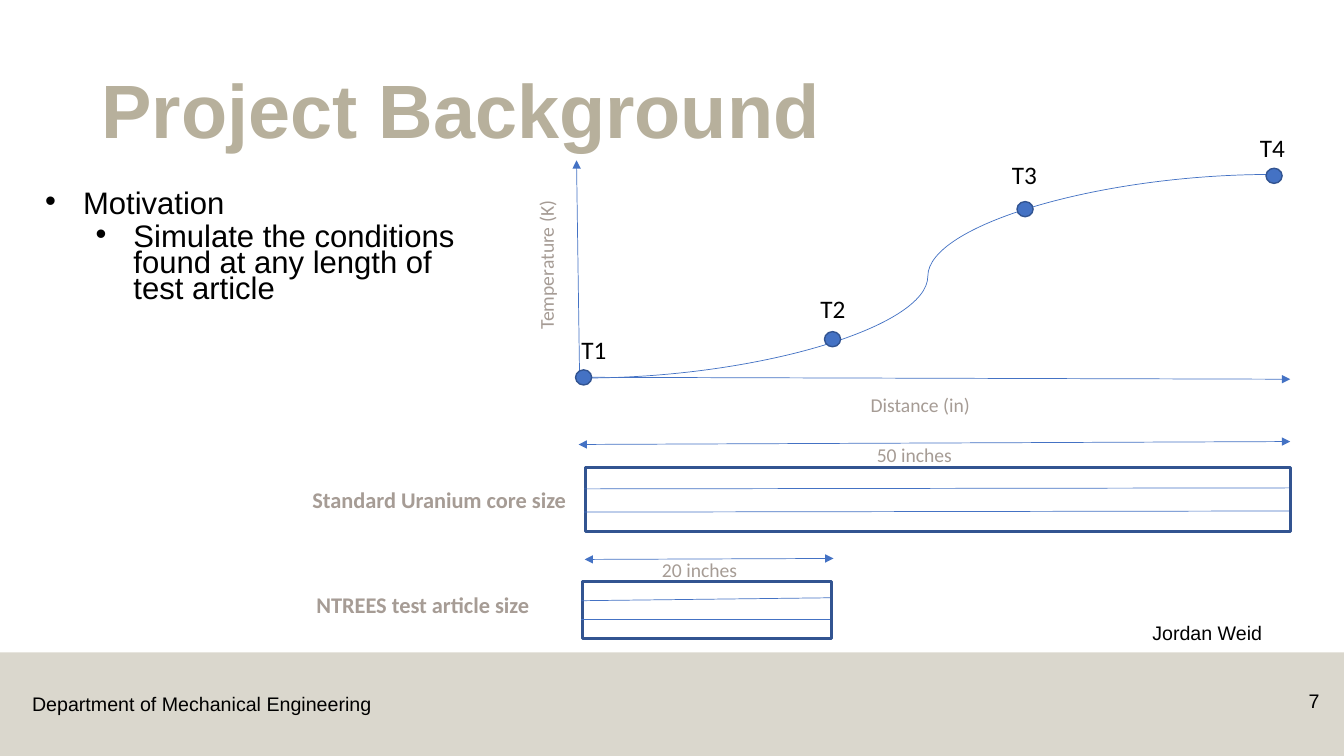
from lxml import etree
from pptx import Presentation
from pptx.dml.color import RGBColor
from pptx.enum import shapes, text
from pptx.oxml import ns
from pptx.util import Pt

HUES = {"sand": "B7B09C", "gray": "A69C95", "blue": "4472C4",
        "navy": "325491", "black": "000000"}
SHAPE = shapes.MSO_SHAPE
LINK = shapes.MSO_CONNECTOR
ALIGN = text.PP_ALIGN
ANCHOR = text.MSO_ANCHOR


def hue(name):
    return RGBColor.from_string(HUES[name])


def sub(node, tag, **attrs):
    return etree.SubElement(node, ns.qn(tag), attrs)


def style(para, size, color="black", font="Arial", bold=False):
    for run in para.runs:
        run.font.name = font
        run.font.size = Pt(size)
        run.font.bold = bold
        run.font.color.rgb = hue(color)


def write(slide, words, box, size, color="black", font="Arial", bold=False,
          wrap=True, turn=0):
    area = slide.shapes.add_textbox(*map(Pt, box))
    area.rotation = turn
    frame = area.text_frame
    frame.word_wrap = wrap
    frame.text = words
    for para in frame.paragraphs:
        style(para, size, color, font, bold)
    return frame


def label(slide, words, x, y, size=14, color="gray", width=216, **more):
    box = (x, y, width, size * 1.22 + 7.2)
    return write(slide, words, box, size, color, "Calibri", **more)


def shape(slide, kind, box, fill=None, line=None, weight=1):
    item = slide.shapes.add_shape(kind, *map(Pt, box))
    item.shadow.inherit = False
    if fill:
        item.fill.solid()
        item.fill.fore_color.rgb = hue(fill)
    else:
        item.fill.background()
    if line:
        item.line.color.rgb = hue(line)
        item.line.width = Pt(weight)
    else:
        item.line.fill.background()
    return item


def line(slide, x1, y1, x2, y2, kind=LINK.STRAIGHT, ends=()):
    item = slide.shapes.add_connector(kind, *map(Pt, (x1, y1, x2, y2)))
    item.line.color.rgb = hue("blue")
    item.line.width = Pt(0.5)
    props = item.line._get_or_add_ln()
    for end in ends:
        sub(props, "a:" + end, type="triangle")
    sub(item._element.spPr, "a:effectLst")


def footer(slide, x, y, w, h):
    band = shape(slide, SHAPE.RECTANGLE, (x, y, w, h), "sand")
    tint = band.fill._xPr.find(".//" + ns.qn("a:srgbClr"))
    sub(tint, "a:alpha", val="50000")
    write(slide, "Department of Mechanical Engineering",
          (x + 15.8, y + 25, 258.5, 24.5), 14, wrap=False)
    page = write(slide, "7", (x + w - 65.8, y + 22.9, 55.4, 28.8), 14)
    page.paragraphs[0].alignment = ALIGN.RIGHT
    author = write(slide, "Jordan Weid", (x + w - 144, y - 24, 144, 24.5), 14)
    author.paragraphs[0].line_spacing = 0.9


def title(slide, *box):
    frame = write(slide, "Project Background", box, 54, "sand", bold=True)
    frame.vertical_anchor = ANCHOR.BOTTOM
    frame.paragraphs[0].line_spacing = 0.9


def points(slide, *box):
    frame = write(slide, "Motivation\nSimulate the conditions found at any "
                  "length of test article", box, 22.2)
    for level, para in enumerate(frame.paragraphs):
        para.level = level
        para.line_spacing = 0.7
        para.space_before = Pt(5 * level)
        props = para._p.get_or_add_pPr()
        props.set("marL", str(Pt(27 + 36 * level)))
        props.set("indent", str(Pt(-27)))
        sub(props, "a:buFont", typeface="Arial")
        sub(props, "a:buChar", char="•")


def graph(slide, x, y, w, h):
    # Axes and profile
    line(slide, x + 2.2, y + h, x, y, ends=["tailEnd"])
    line(slide, x + 1.5, y + h, x + w, y + h + 1.4, ends=["tailEnd"])
    line(slide, x + 496.1, y + 10.1, x + 5.8, y + h + 0.5, LINK.CURVE)
    label(slide, "Distance (in)", x + 203, y + h + 7.7)
    label(slide, "Temperature (K)", x - 129.6, y + 7.9, turn=270)
    # Dot centre, then label offset and width
    marks = [(5.1, 155.1, -8.7, -34.2, 60), (182.9, 127.8, -15.8, -36.4, 216),
             (320.4, 34.9, -16.5, -39.2, 216), (498.3, 11.1, -17.3, -34.9, 60)]
    for num, (cx, cy, dx, dy, width) in enumerate(marks, 1):
        shape(slide, SHAPE.OVAL, (x + cx - 5.75, y + cy - 5.4, 11.5, 10.8),
              "blue", "navy")
        label(slide, f"T{num}", x + cx + dx, y + cy + dy, 18, "black", width)


def core(slide, x, y, w, h, name, size, rows, span, spots):
    shape(slide, SHAPE.RECTANGLE, (x, y, w, h), None, "navy", 2.25)
    for left, right in rows:
        line(slide, x - 1, y + left, x + w - 1, y + right)
    # Length arrow and captions
    x1, y1, x2, y2 = span
    line(slide, x + x1, y + y1, x + w + x2, y + y2,
         ends=["headEnd", "tailEnd"])
    (sx, sy), (nx, ny) = spots
    label(slide, size, x + sx, y + sy)
    label(slide, name, x + nx, y + ny, 16, bold=True)


def main():
    deck = Presentation()
    deck.slide_width, deck.slide_height = Pt(960), Pt(540)
    slide = deck.slides.add_slide(deck.slide_layouts[6])
    footer(slide, 0, 466, 960, 74)
    title(slide, 65.5, 54, 828, 59.8)
    points(slide, 25.2, 134.6, 320.4, 95.8)
    graph(slide, 411.8, 114.5, 509.8, 155)
    core(slide, 418.3, 334.1, 503.3, 45.4, "Standard Uranium core size",
         "50 inches", [(15.1, 14.4), (31.7, 30.9)], (-5, -16.6, 0, -18.7),
         [(200.9, -21.6), (-202.3, 9.3)])
    core(slide, 416.2, 415.4, 177.8, 41, "NTREES test article size",
         "20 inches", [(13.7, 11.6), (26.7, 26.7)], (1.4, -15.8, 1.4, -16.5),
         [(49.6, -20.1), (-197.3, 3.6)])
    deck.save("out.pptx")


if __name__ == "__main__":
    main()
